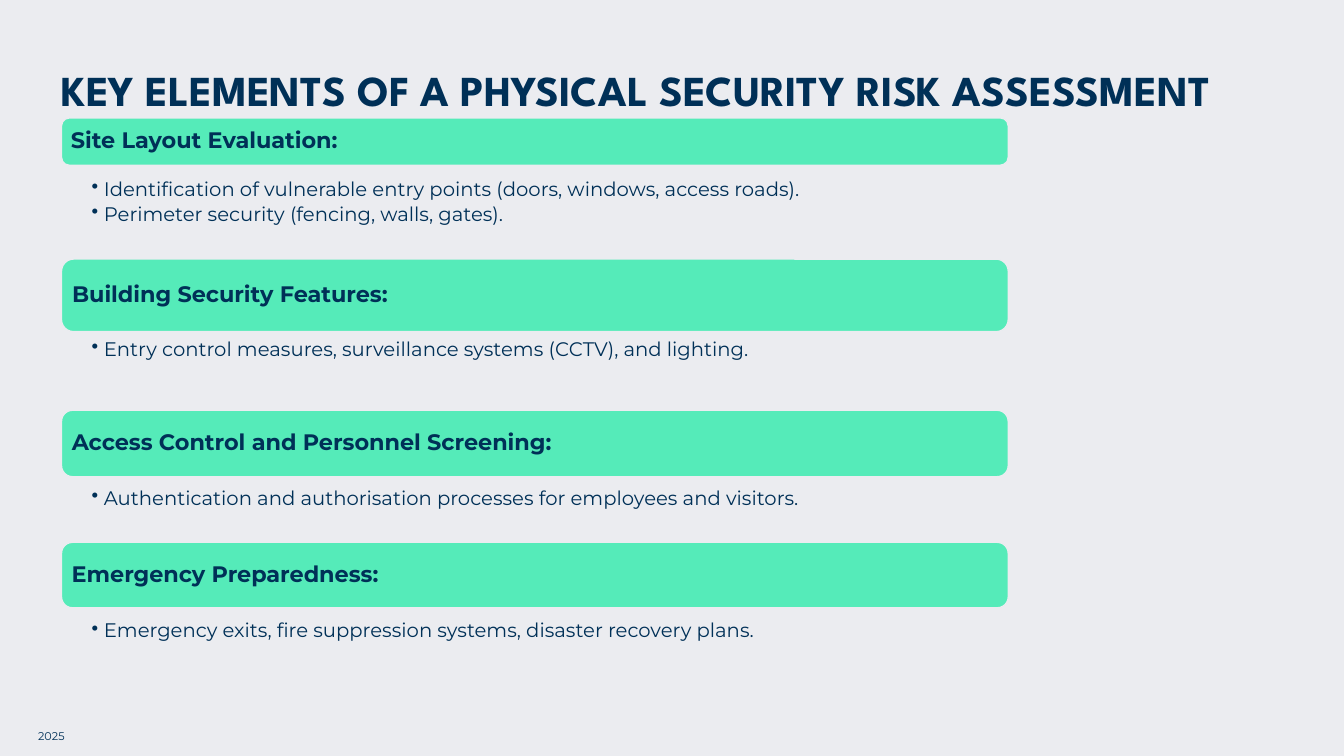
from pptx import Presentation
from pptx.dml.color import RGBColor
from pptx.enum.shapes import MSO_SHAPE
from pptx.enum.text import MSO_ANCHOR, PP_ALIGN
from pptx.oxml.ns import qn
from pptx.util import Inches, Pt
from lxml.etree import SubElement

NAVY = RGBColor(0x00, 0x30, 0x57)
MINT = RGBColor(0x55, 0xEB, 0xB9)
PALE = RGBColor(0xEB, 0xEC, 0xF0)
HEADING_FONT = "League Spartan"
BODY_FONT = "Montserrat"
LEFT, WIDTH = 0.61, 9.39

# Heading, bar top, bar height, list top, list height, bullet points
SECTIONS = [
    ("Site Layout Evaluation:", 1.17, 0.47, 1.76, 0.7,
     ["Identification of vulnerable entry points (doors, windows, access roads).",
      "Perimeter security (fencing, walls, gates)."]),
    ("Building Security Features:", 2.57, 0.72, 3.35, 0.54,
     ["Entry control measures, surveillance systems (CCTV), and lighting."]),
    ("Access Control and Personnel Screening:", 4.07, 0.66, 4.83, 0.5,
     ["Authentication and authorisation processes for employees and visitors."]),
    ("Emergency Preparedness:", 5.38, 0.65, 6.14, 0.32,
     ["Emergency exits, fire suppression systems, disaster recovery plans."]),
]


def set_insets(frame, left, top, right, bottom):
    frame.word_wrap = True
    frame.margin_left, frame.margin_top = Inches(left), Inches(top)
    frame.margin_right, frame.margin_bottom = Inches(right), Inches(bottom)


def write(para, text, size, font=BODY_FONT, bold=False, spacing=0.9):
    para.alignment = PP_ALIGN.LEFT
    para.line_spacing = spacing
    span = para.add_run()
    span.text = text
    span.font.name = font
    span.font.size = Pt(size)
    span.font.bold = bold
    span.font.color.rgb = NAVY


def add_text(page, left, top, width, height, insets):
    box = page.shapes.add_textbox(Inches(left), Inches(top), Inches(width), Inches(height))
    set_insets(box.text_frame, *insets)
    return box.text_frame


def add_bar(page, heading, top, height):
    bar = page.shapes.add_shape(MSO_SHAPE.ROUNDED_RECTANGLE, Inches(LEFT), Inches(top),
                                Inches(WIDTH), Inches(height))
    bar.shadow.inherit = False
    bar.fill.solid()
    bar.fill.fore_color.rgb = MINT
    bar.line.color.rgb = PALE
    bar.line.width = Pt(1)
    frame = bar.text_frame
    set_insets(frame, 0.07, 0.07, 0.07, 0.07)
    frame.vertical_anchor = MSO_ANCHOR.MIDDLE
    write(frame.paragraphs[0], heading, 16, bold=True)


def add_bullets(page, points, top, height):
    frame = add_text(page, LEFT, top, WIDTH, height, (0.3, 0.02, 0.11, 0.02))
    for index, point in enumerate(points):
        para = frame.add_paragraph() if index else frame.paragraphs[0]
        properties = para._p.get_or_add_pPr()
        properties.set("marL", str(Inches(0.12)))
        properties.set("indent", str(-Inches(0.12)))
        SubElement(properties, qn("a:buChar")).set("char", "•")
        para.space_after = Pt(2.8)
        write(para, point, 14)


def main():
    deck = Presentation()
    deck.slide_width, deck.slide_height = Inches(13.33), Inches(7.5)
    page = deck.slides.add_slide(deck.slide_layouts[6])
    page.background.fill.solid()
    page.background.fill.fore_color.rgb = PALE

    # Title
    title = add_text(page, 0.54, 0.51, 12.26, 0.66, (0.07, 0.18, 0.1, 0.05))
    write(title.paragraphs[0], "KEY ELEMENTS OF A PHYSICAL SECURITY RISK ASSESSMENT",
          30.5, font=HEADING_FONT, bold=True)

    # Sections
    for heading, bar_top, bar_height, list_top, list_height, points in SECTIONS:
        add_bar(page, heading, bar_top, bar_height)
        add_bullets(page, points, list_top, list_height)

    # Footer
    footer = add_text(page, 0.28, 7.19, 2.62, 0.24, (0.1, 0.05, 0.1, 0.05))
    write(footer.paragraphs[0], "2025", 8, spacing=1.0)

    deck.save("out.pptx")


if __name__ == "__main__":
    main()
